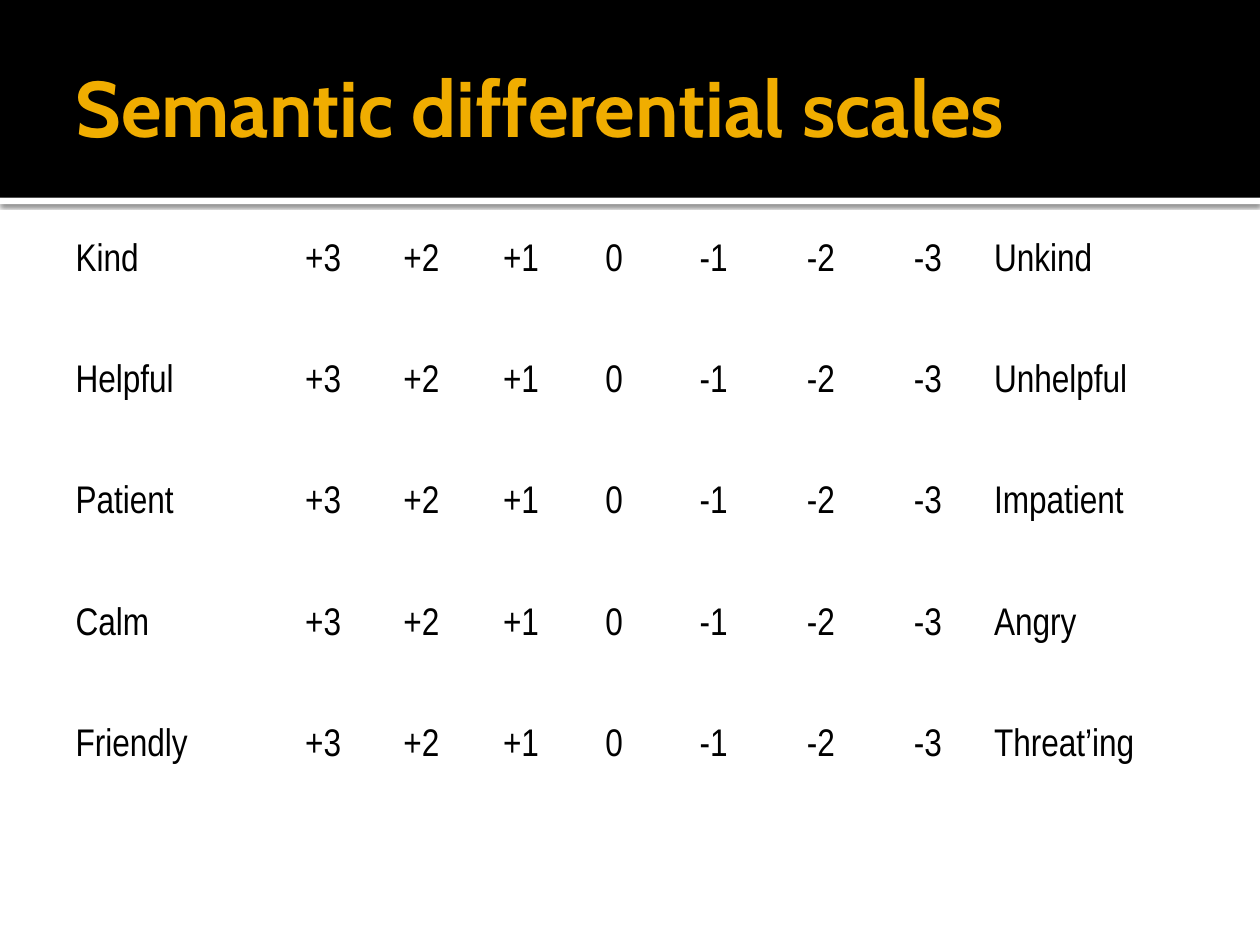
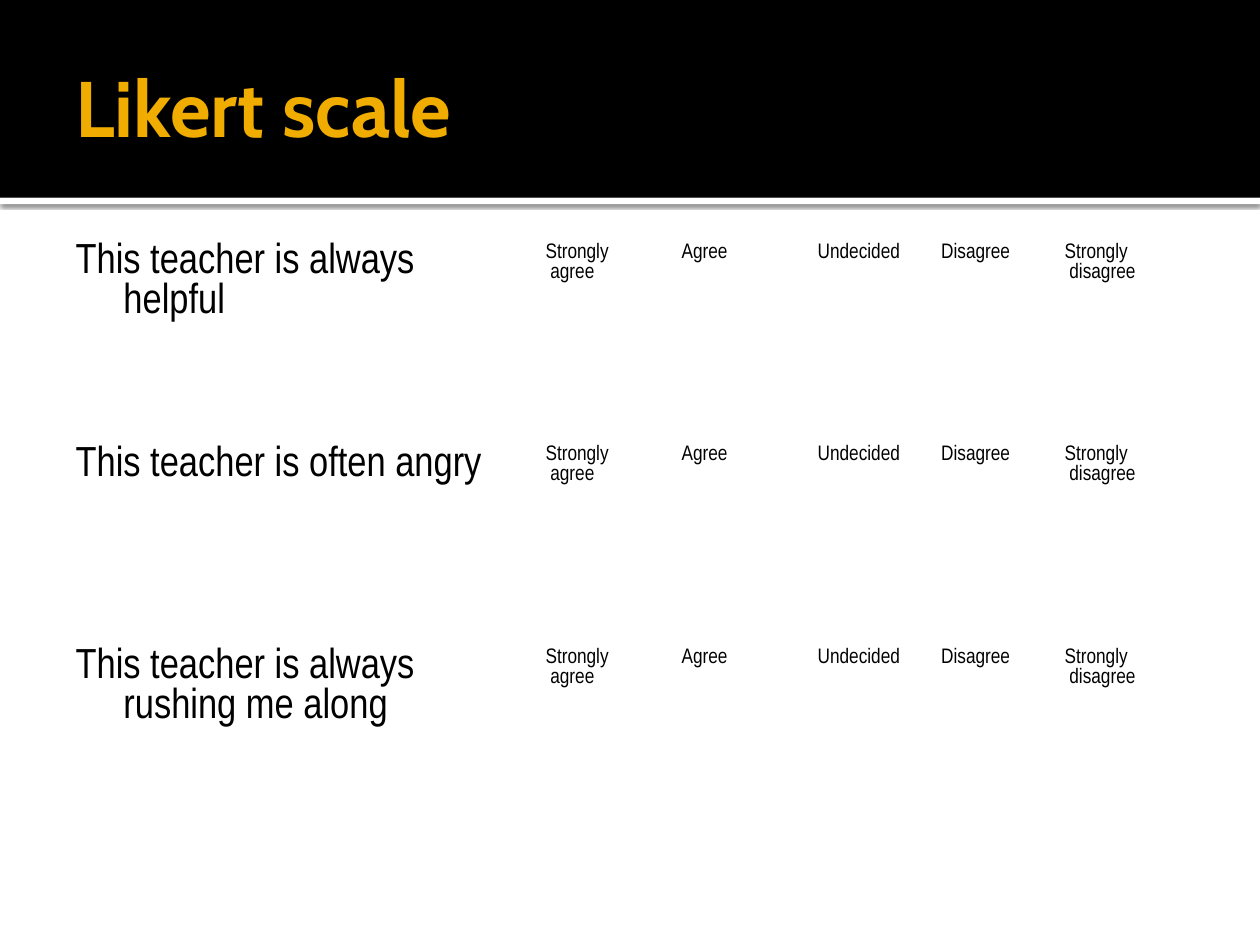
from dataclasses import dataclass

import pptx
import pptx.dml.color
import pptx.enum.shapes
import pptx.enum.text
import pptx.oxml
import pptx.oxml.ns
import pptx.util
from pptx.util import Inches

BLACK, WHITE, GOLD = "000000", "FFFFFF", "F0AD00"
TITLE_FONT, BODY_FONT = "Cabin", "Arial Narrow"
LEFT = pptx.enum.text.PP_ALIGN.LEFT
CENTER = pptx.enum.text.PP_ALIGN.CENTER
TABLE_LEFT, TABLE_TOP = 0.5, 1.88
TABLE_WIDTH, TABLE_HEIGHT = 9, 4.82
HANGING_INDENT = 0.38


@dataclass
class Band:
    top: float
    height: float
    color: str
    shadow: bool = False


@dataclass
class Column:
    width: float
    size: int
    align: pptx.enum.text.PP_ALIGN = LEFT


@dataclass
class ScaleSlide:
    title: str
    columns: list[Column]
    rows: list[list[str]]


BANDS = [Band(1.57, 0.05, WHITE, shadow=True), Band(0, 1.57, BLACK)]

SCORES = ["+3", "+2", "+1", "0", "-1", "-2", "-3"]
SCORE_WIDTHS = [0.73, 0.83, 0.75, 0.73, 0.85, 0.85, 0.85]
OPPOSITES = [
    ("Kind", "Unkind"),
    ("Helpful", "Unhelpful"),
    ("Patient", "Impatient"),
    ("Calm", "Angry"),
    ("Friendly", "Threat’ing"),
]

ANSWERS = ["Strongly\n agree", "Agree", "Undecided", "Disagree", "Strongly\n disagree"]
ANSWER_WIDTHS = [1.08, 1.08, 0.98, 0.98, 1.15]
STATEMENTS = [
    "This teacher is always helpful",
    "This teacher is often angry",
    "This teacher is always rushing me along",
]

SLIDES = [
    ScaleSlide(
        "Semantic differential scales",
        [Column(1.7, 22), *(Column(w, 22, CENTER) for w in SCORE_WIDTHS), Column(1.7, 22)],
        [[low, *SCORES, high] for low, high in OPPOSITES],
    ),
    ScaleSlide(
        "Likert scale",
        [Column(3.73, 24), *(Column(w, 12) for w in ANSWER_WIDTHS)],
        [[statement, *ANSWERS] for statement in STATEMENTS],
    ),
]


def rgb(color: str) -> pptx.dml.color.RGBColor:
    return pptx.dml.color.RGBColor.from_string(color)


def style_run(r, font: str, size: int, color: str, bold: bool = False) -> None:
    r.font.name = font
    r.font.size = pptx.util.Pt(size)
    r.font.bold = bold
    r.font.color.rgb = rgb(color)


def add_shadow(sp) -> None:
    effects = sp._element.spPr.find(pptx.oxml.ns.qn("a:effectLst"))
    effects.append(pptx.oxml.parse_xml(
        f'<a:outerShdw {pptx.oxml.ns.nsdecls("a")} blurRad="31750" dist="10160" '
        'dir="5400000" algn="tl" rotWithShape="0">'
        f'<a:srgbClr val="{BLACK}"><a:alpha val="60000"/></a:srgbClr></a:outerShdw>'
    ))


def add_band(s, band: Band) -> None:
    sp = s.shapes.add_shape(
        pptx.enum.shapes.MSO_SHAPE.RECTANGLE,
        Inches(0), Inches(band.top), Inches(10), Inches(band.height),
    )
    sp.fill.solid()
    sp.fill.fore_color.rgb = rgb(band.color)
    sp.line.fill.background()
    sp.shadow.inherit = False
    if band.shadow:
        add_shadow(sp)


def add_title(s, title: str) -> None:
    sp = s.shapes.add_textbox(Inches(0.5), Inches(0.13), Inches(8.25), Inches(1.42))
    tf = sp.text_frame
    tf.word_wrap = True
    tf.vertical_anchor = pptx.enum.text.MSO_ANCHOR.MIDDLE
    tf.margin_left = Inches(0.1)
    tf.margin_right = tf.margin_top = tf.margin_bottom = Inches(0.05)
    tf.text = title
    style_run(tf.paragraphs[0].runs[0], TITLE_FONT, 45, GOLD, bold=True)


def fill_cell(cell, text: str, column: Column) -> None:
    cell.fill.background()
    cell.text_frame.text = text
    for p in cell.text_frame.paragraphs:
        p.alignment = column.align
        pPr = p._p.get_or_add_pPr()
        pPr.set("marL", str(Inches(HANGING_INDENT)))
        pPr.set("indent", str(-Inches(HANGING_INDENT)))
        for r in p.runs:
            style_run(r, BODY_FONT, column.size, BLACK)


def add_scale_table(s, scale: ScaleSlide) -> None:
    table = s.shapes.add_table(
        len(scale.rows), len(scale.columns),
        Inches(TABLE_LEFT), Inches(TABLE_TOP), Inches(TABLE_WIDTH), Inches(TABLE_HEIGHT),
    ).table
    table.first_row = table.horz_banding = False
    for table_column, column in zip(table.columns, scale.columns):
        table_column.width = Inches(column.width)
    for i, row in enumerate(scale.rows):
        for j, (text, column) in enumerate(zip(row, scale.columns)):
            fill_cell(table.cell(i, j), text, column)


def add_scale_slide(prs, scale: ScaleSlide) -> None:
    s = prs.slides.add_slide(prs.slide_layouts[6])
    s.background.fill.solid()
    s.background.fill.fore_color.rgb = rgb(WHITE)
    for band in BANDS:
        add_band(s, band)
    add_title(s, scale.title)
    add_scale_table(s, scale)


def main() -> None:
    prs = pptx.Presentation()
    prs.slide_width, prs.slide_height = Inches(10), Inches(7.5)
    for scale in SLIDES:
        add_scale_slide(prs, scale)
    prs.save("out.pptx")


if __name__ == "__main__":
    main()
